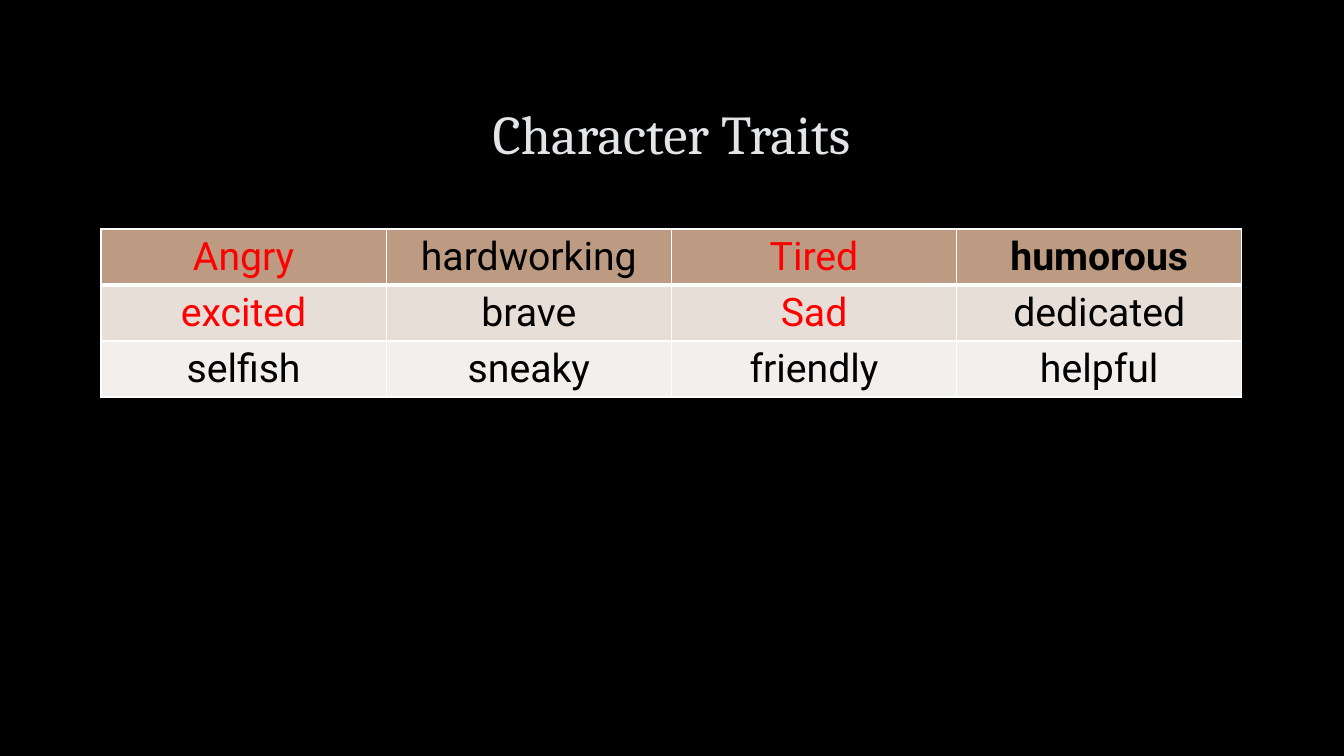
"""Build the Character Traits slide: a title above a table of words."""
import pptx
import pptx.dml.color
import pptx.enum.text
import pptx.oxml
import pptx.oxml.ns
import pptx.util

PX = 12192000 / 1344
THEME = {
    "back": "000000", "title": "E2E5E8", "text": "000000", "mood": "FF0000",
    "rule": "FFFFFF", "rows": ["BC9B82", "E7DED8", "F3EFED"],
    "head_font": "Cambria", "body_font": "Roboto",
    "head_size": 39, "body_size": 28, "thin": 1, "thick": 3,
}
TRAITS = [
    ["Angry", "hardworking", "Tired", "humorous"],
    ["excited", "brave", "Sad", "dedicated"],
    ["selfish", "sneaky", "friendly", "helpful"],
]
MOODS = {"Angry", "Tired", "excited", "Sad"}
LEFT, WIDTH, ROW = 101, 1141, 56


def box(*sides):
    """Turn px lengths into EMU."""
    return [pptx.util.Emu(round(side * PX)) for side in sides]


def style(para, face, size, color):
    """Centre a paragraph and set its font."""
    para.alignment = pptx.enum.text.PP_ALIGN.CENTER
    para.font.name = face
    para.font.size = pptx.util.Pt(size)
    para.font.color.rgb = pptx.dml.color.RGBColor.from_string(color)


deck = pptx.Presentation()
deck.slide_width, deck.slide_height = box(1344, 756)
slide = deck.slides.add_slide(deck.slide_layouts.get_by_name("Title Only"))
slide.background.fill.solid()
slide.background.fill.fore_color.rgb = pptx.dml.color.RGBColor.from_string(THEME["back"])

title = slide.shapes.title
title.left, title.top, title.width, title.height = box(LEFT, 67, WIDTH, 139)
title.text_frame.text = "Character Traits"
title.text_frame.vertical_anchor = pptx.enum.text.MSO_ANCHOR.MIDDLE
head = title.text_frame.paragraphs[0]
head.line_spacing = 0.9
style(head, THEME["head_font"], THEME["head_size"], THEME["title"])

frame = slide.shapes.add_table(
    len(TRAITS), len(TRAITS[0]), *box(LEFT, 229, WIDTH, ROW * len(TRAITS)))
table = frame.table
table.first_row = table.horz_banding = False

for row, words in enumerate(TRAITS):
    for col, word in enumerate(words):
        cell = table.cell(row, col)
        cell.text = word
        para = cell.text_frame.paragraphs[0]
        color = THEME["mood"] if word in MOODS else THEME["text"]
        style(para, THEME["body_font"], THEME["body_size"], color)
        para.font.bold = word == "humorous"
        cell.fill.solid()
        cell.fill.fore_color.rgb = pptx.dml.color.RGBColor.from_string(THEME["rows"][row])
        props = cell._tc.get_or_add_tcPr()
        for place, side in enumerate("LRTB"):
            heavy = (row, side) in {(0, "B"), (1, "T")}
            width = pptx.util.Pt(THEME["thick" if heavy else "thin"])
            props.insert(place, pptx.oxml.parse_xml(
                f'<a:ln{side} {pptx.oxml.ns.nsdecls("a")} w="{width}"><a:solidFill>'
                f'<a:srgbClr val="{THEME["rule"]}"/></a:solidFill></a:ln{side}>'))

deck.save("out.pptx")
